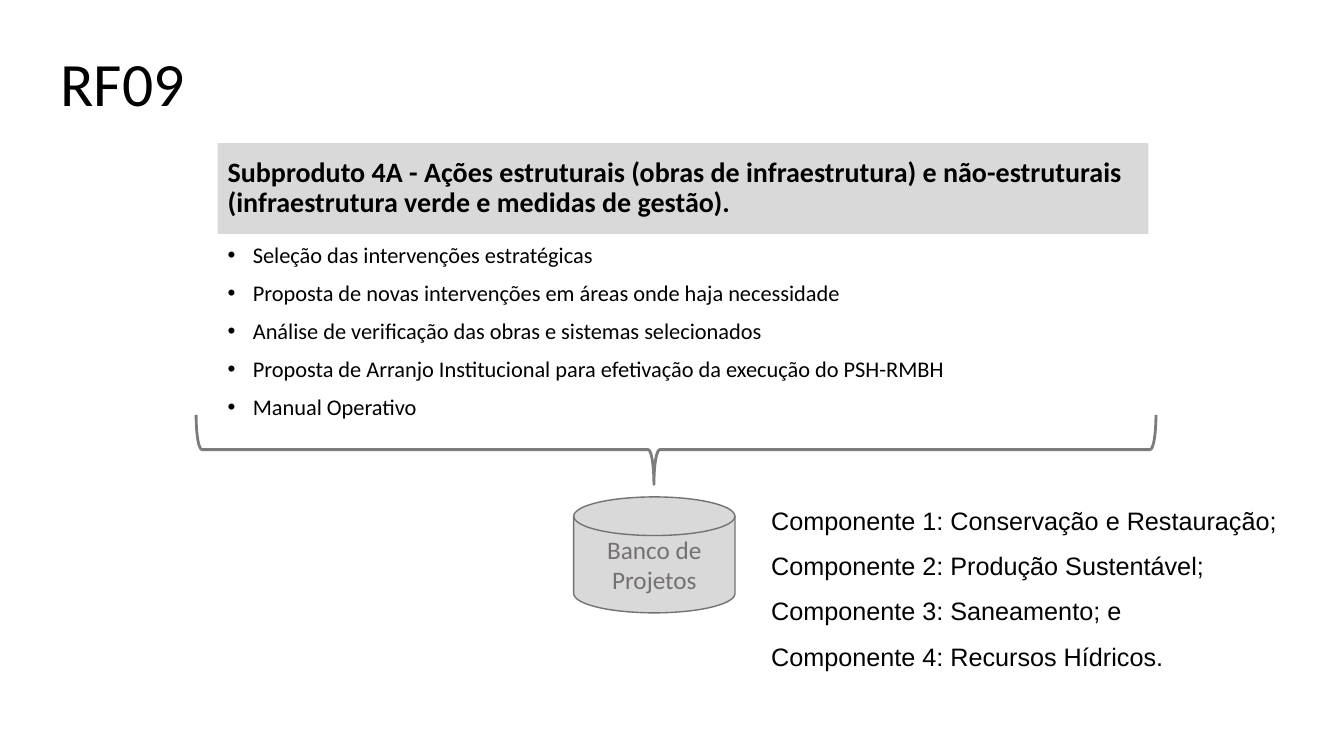
from lxml import etree
from pptx import Presentation
from pptx.dml.color import RGBColor
from pptx.enum.shapes import MSO_SHAPE as SHAPE
from pptx.enum.text import MSO_ANCHOR as ANCHOR, MSO_AUTO_SIZE as AUTO_SIZE, PP_ALIGN as ALIGN
from pptx.oxml.ns import qn
from pptx.util import Inches, Pt

COLORS = {"text": "000000", "panel": "D9D9D9", "brace": "7C7C7C", "disk": "767171"}


def color(name):
    return RGBColor.from_string(COLORS[name])


def write(shape, lines, size, font="Calibri", ink="text", bold=False,
          align=ALIGN.LEFT, spacing=1.0, gap=0, anchor=ANCHOR.TOP, bullet=False):
    frame = shape.text_frame
    frame.word_wrap = True
    frame.vertical_anchor = anchor
    frame.text = "\n".join(lines)
    for index, paragraph in enumerate(frame.paragraphs):
        if bullet:
            properties = paragraph._p.get_or_add_pPr()
            properties.set("marL", str(Inches(0.25)))
            properties.set("indent", str(-Inches(0.25)))
            etree.SubElement(properties, qn("a:buFont")).set("typeface", "Arial")
            etree.SubElement(properties, qn("a:buChar")).set("char", "•")
        paragraph.alignment = align
        paragraph.line_spacing = spacing
        paragraph.space_before = Pt(gap if index else 0)
        for run in paragraph.runs:
            run.font.name = font
            run.font.size = Pt(size)
            run.font.bold = bold
            run.font.color.rgb = color(ink)


prs = Presentation()
prs.slide_width, prs.slide_height = Inches(13.33), Inches(7.5)
slide = prs.slides.add_slide(prs.slide_layouts[5])
shapes = slide.shapes

# Title
title = shapes.title
title.left, title.top = Inches(0.5), Inches(0.13)
title.width, title.height = Inches(11.5), Inches(1.45)
write(title, ["RF09"], 44, spacing=0.9, anchor=ANCHOR.MIDDLE)

# Subproduct heading
subproduct = shapes.add_shape(SHAPE.RECTANGLE, Inches(2.16), Inches(1.42), Inches(9.23), Inches(0.9))
subproduct.shadow.inherit = False
subproduct.fill.solid()
subproduct.fill.fore_color.rgb = color("panel")
subproduct.line.fill.background()
write(subproduct, ["Subproduto 4A - Ações estruturais (obras de infraestrutura) e não-estruturais "
                   "(infraestrutura verde e medidas de gestão)."],
      20, bold=True, spacing=0.9, anchor=ANCHOR.MIDDLE)

# Activities
activities = shapes.add_textbox(Inches(2.16), Inches(2.37), Inches(9.23), Inches(2.05))
write(activities, [
    "Seleção das intervenções estratégicas",
    "Proposta de novas intervenções em áreas onde haja necessidade",
    "Análise de verificação das obras e sistemas selecionados",
    "Proposta de Arranjo Institucional para efetivação da execução do PSH-RMBH",
    "Manual Operativo",
], 16, spacing=0.9, gap=10, bullet=True)

# Brace turned to point down at the project bank
brace = shapes.add_shape(SHAPE.LEFT_BRACE, Inches(6.36), Inches(-0.3), Inches(0.69), Inches(9.52))
brace.rotation = 270
brace.adjustments[0], brace.adjustments[1] = 0.083, 0.477
brace.shadow.inherit = False
brace.fill.background()
brace.line.color.rgb = color("brace")
brace.line.width = Pt(2)

# Project bank
bank = shapes.add_shape(SHAPE.FLOWCHART_MAGNETIC_DISK, Inches(5.69), Inches(4.93), Inches(1.6), Inches(1.15))
bank.shadow.inherit = False
bank.fill.solid()
bank.fill.fore_color.rgb = color("panel")
bank.line.color.rgb = color("disk")
bank.line.width = Pt(1)
write(bank, ["Banco de Projetos"], 18, ink="disk", align=ALIGN.CENTER, anchor=ANCHOR.MIDDLE)

# Components
components = shapes.add_textbox(Inches(7.55), Inches(4.81), Inches(6.67), Inches(1.86))
write(components, [
    "Componente 1: Conservação e Restauração;",
    "Componente 2: Produção Sustentável;",
    "Componente 3: Saneamento; e",
    "Componente 4: Recursos Hídricos.",
], 18, font="Arial", align=ALIGN.JUSTIFY, spacing=1.5)
components.text_frame.auto_size = AUTO_SIZE.SHAPE_TO_FIT_TEXT

prs.save("out.pptx")
